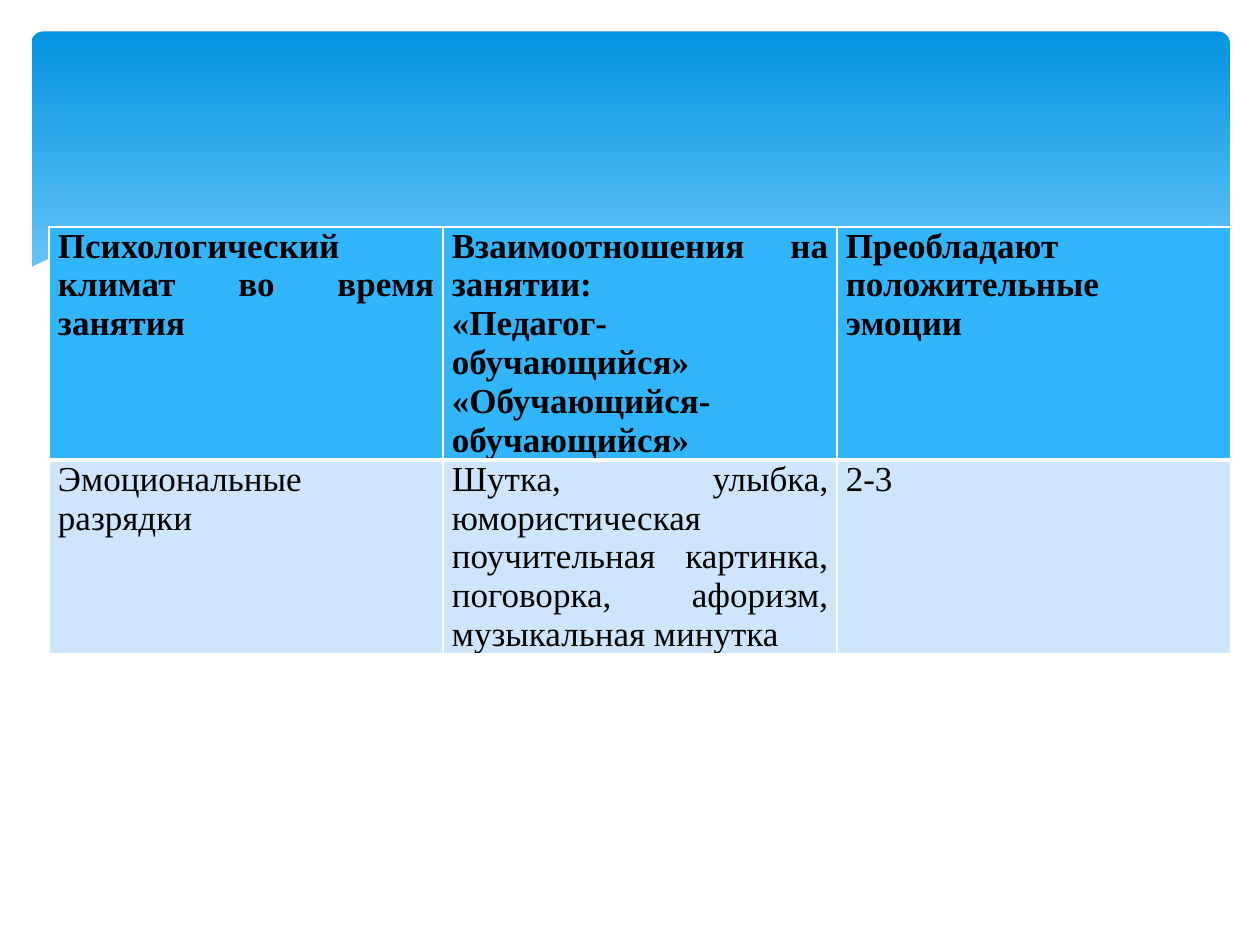
from lxml.etree import SubElement
from pptx import Presentation
from pptx.dml.color import RGBColor
from pptx.enum.shapes import MSO_SHAPE
from pptx.enum.text import PP_ALIGN
from pptx.oxml.ns import qn
from pptx.util import Inches, Pt

FONT = "Times New Roman"
BANNER_STOPS = [(0, "0293E0"), (0.9, "83D3FE")]
WAVE = [
    (9.77, 2.46), (9.4, 2.59), (8.99, 2.69), (8.5, 2.75), (8.09, 2.77),
    (7.61, 2.75), (7.08, 2.7), (6.48, 2.62), (5.79, 2.5), (5.03, 2.33),
    (4.47, 2.2), (3.91, 2.07), (3.4, 1.97), (2.92, 1.9), (2.5, 1.86),
    (2.11, 1.84), (1.61, 1.84), (1.19, 1.87), (0.85, 1.93), (0.59, 1.99),
    (0.4, 2.05), (0.29, 2.1), (0.23, 2.13), (0.23, 3.29), (9.77, 3.29),
]
ROWS = [
    {
        "height": 1.85, "fill": "31B6FD", "bold": True,
        "borders": {"L": 1, "R": 1, "T": 1, "B": 3},
        "cells": [
            "Психологический климат во время занятия",
            "Взаимоотношения на занятии: \n«Педагог-обучающийся»\n«Обучающийся-обучающийся»",
            "Преобладают положительные эмоции",
        ],
    },
    {
        "height": 1.54, "fill": "CEE5FE", "bold": False,
        "borders": {"L": 1, "R": 1, "T": 3, "B": 1},
        "cells": [
            "Эмоциональные разрядки",
            "Шутка, улыбка, юмористическая поучительная  картинка, поговорка, афоризм, музыкальная минутка",
            "2-3",
        ],
    },
]
TABLE_LEFT, TABLE_TOP, TABLE_WIDTH = 0.39, 1.8, 9.38


def color(value):
    return RGBColor.from_string(value)


def add_banner(slide):
    banner = slide.shapes.add_shape(
        MSO_SHAPE.ROUNDED_RECTANGLE, Inches(0.25), Inches(0.25), Inches(9.51), Inches(2.7))
    banner.adjustments[0] = 0.034
    banner.shadow.inherit = False
    banner.line.fill.background()
    banner.fill.gradient()
    banner.fill.gradient_angle = 270
    for stop, (position, value) in zip(banner.fill.gradient_stops, BANNER_STOPS):
        stop.position = position
        stop.color.rgb = color(value)


def add_wave(slide):
    points = [(Inches(x), Inches(y)) for x, y in WAVE]
    builder = slide.shapes.build_freeform(*points[0])
    builder.add_line_segments(points[1:], close=True)
    wave = builder.convert_to_shape()
    wave.shadow.inherit = False
    wave.fill.solid()
    wave.fill.fore_color.rgb = color("FFFFFF")
    wave.line.fill.background()


def set_borders(cell, borders):
    properties = cell._tc.get_or_add_tcPr()
    for side, width in borders.items():
        line = SubElement(properties, qn(f"a:ln{side}"), w=str(Pt(width)))
        fill = SubElement(line, qn("a:solidFill"))
        SubElement(fill, qn("a:srgbClr"), val="FFFFFF")


def format_cell(cell, text, row):
    set_borders(cell, row["borders"])
    cell.fill.solid()
    cell.fill.fore_color.rgb = color(row["fill"])
    cell.margin_left = cell.margin_right = Inches(0.07)
    cell.margin_top = cell.margin_bottom = 0
    cell.text_frame.text = text
    for paragraph in cell.text_frame.paragraphs:
        paragraph.alignment = PP_ALIGN.JUSTIFY
        for run in paragraph.runs:
            run.font.name = FONT
            run.font.size = Pt(20)
            run.font.bold = row["bold"]
            run.font.color.rgb = color("000000")


def add_climate_table(slide):
    column_count = len(ROWS[0]["cells"])
    height = sum(row["height"] for row in ROWS)
    table = slide.shapes.add_table(
        len(ROWS), column_count, Inches(TABLE_LEFT), Inches(TABLE_TOP),
        Inches(TABLE_WIDTH), Inches(height)).table
    for row_index, row in enumerate(ROWS):
        table.rows[row_index].height = Inches(row["height"])
        for column_index, text in enumerate(row["cells"]):
            format_cell(table.cell(row_index, column_index), text, row)


def main():
    """Build the slide on the psychological climate of a lesson."""
    presentation = Presentation()
    presentation.slide_width = Inches(10)
    presentation.slide_height = Inches(7.5)
    slide = presentation.slides.add_slide(presentation.slide_layouts[6])
    add_banner(slide)
    add_wave(slide)
    add_climate_table(slide)
    presentation.save("out.pptx")


if __name__ == "__main__":
    main()
